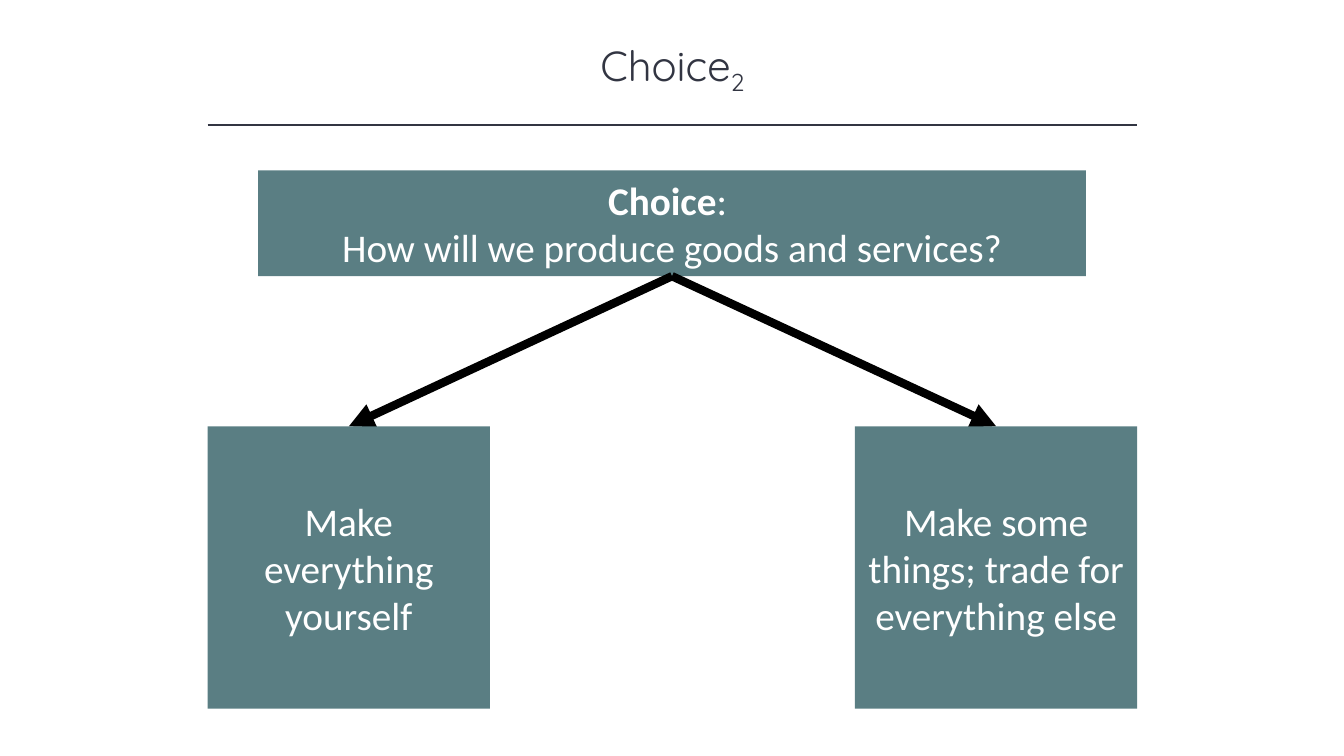
from dataclasses import dataclass

from lxml import etree
from pptx import Presentation
from pptx.dml.color import RGBColor
from pptx.enum.shapes import MSO_CONNECTOR, MSO_SHAPE
from pptx.enum.text import MSO_ANCHOR, MSO_AUTO_SIZE, PP_ALIGN
from pptx.oxml.ns import qn
from pptx.shapes.autoshape import Shape
from pptx.shapes.connector import Connector
from pptx.slide import Slide
from pptx.text.text import TextFrame
from pptx.util import Emu, Pt

RECTANGLE = MSO_SHAPE.RECTANGLE
STRAIGHT = MSO_CONNECTOR.STRAIGHT
CENTER = PP_ALIGN.CENTER
MIDDLE = MSO_ANCHOR.MIDDLE
NO_AUTOFIT = MSO_AUTO_SIZE.NONE

PX = 9144  # 100 px to the inch
TOP, BOTTOM = 0, 2
TITLE_LAYOUT = 5
COLORS = {"ink": "323542", "teal": "5A7E83", "white": "FFFFFF", "arrow": "000000"}


@dataclass(frozen=True)
class Piece:
    text: str
    bold: bool = False
    baseline: int = 0


@dataclass(frozen=True)
class Box:
    left: int
    top: int
    width: int
    height: int
    paragraphs: tuple[tuple[Piece, ...], ...]


TITLE = Box(167, 37, 1000, 61, ((Piece("Choice"), Piece("2", baseline=-25000)),))
QUESTION = Box(256, 169, 821, 105, (
    (Piece("Choice", bold=True), Piece(": ")),
    (Piece("How will we produce goods and services?"),),
))
OPTION_SIZE, OPTION_TOP = 280, 423
RULE_LEFT, RULE_RIGHT, RULE_Y = 206, 1128, 124
OPTIONS = [
    Box(left, OPTION_TOP, OPTION_SIZE, OPTION_SIZE, ((Piece(text),),))
    for left, text in (
        (RULE_LEFT, "Make everything yourself"),
        (RULE_RIGHT - OPTION_SIZE, "Make some things; trade for everything else"),
    )
]


def px(length: int) -> Emu:
    return Emu(length * PX)


def color(name: str) -> RGBColor:
    return RGBColor.from_string(COLORS[name])


def write(frame: TextFrame, box: Box, font: str, size: int, ink: str) -> None:
    frame.word_wrap = True
    frame.auto_size = NO_AUTOFIT
    frame.vertical_anchor = MIDDLE
    for index, pieces in enumerate(box.paragraphs):
        paragraph = frame.add_paragraph() if index else frame.paragraphs[0]
        paragraph.alignment = CENTER
        for piece in pieces:
            run = paragraph.add_run()
            run.text = piece.text
            run.font.name = font
            run.font.size = Pt(size)
            run.font.bold = piece.bold
            run.font.color.rgb = color(ink)
            if piece.baseline:
                run.font._element.set("baseline", str(piece.baseline))


def add_box(slide: Slide, box: Box) -> Shape:
    shape = slide.shapes.add_shape(
        RECTANGLE, px(box.left), px(box.top), px(box.width), px(box.height))
    shape.shadow.inherit = False
    shape.fill.solid()
    shape.fill.fore_color.rgb = color("teal")
    shape.line.fill.background()
    write(shape.text_frame, box, "Calibri", 28, "white")
    return shape


def add_line(slide: Slide, start: tuple[int, int], end: tuple[int, int],
             ink: str, width: int) -> Connector:
    line = slide.shapes.add_connector(STRAIGHT, *map(px, start + end))
    line.line.color.rgb = color(ink)
    line.line.width = Pt(width)
    etree.SubElement(line.element.spPr, qn("a:effectLst"))
    return line


def add_arrow(slide: Slide, source: Shape, target: Shape) -> None:
    arrow = add_line(slide, (0, 0), (0, 0), "arrow", 6)
    arrow.begin_connect(source, BOTTOM)
    arrow.end_connect(target, TOP)
    outline = arrow.element.spPr.find(qn("a:ln"))
    etree.SubElement(outline, qn("a:tailEnd"), type="triangle")
    # The target box covers the tip of its arrow
    arrow.element.addnext(target.element)


def main() -> None:
    deck = Presentation()
    deck.slide_width, deck.slide_height = px(1333), px(750)
    slide = deck.slides.add_slide(deck.slide_layouts[TITLE_LAYOUT])

    # Title and rule
    heading = slide.shapes.title
    heading.left, heading.top = px(TITLE.left), px(TITLE.top)
    heading.width, heading.height = px(TITLE.width), px(TITLE.height)
    write(heading.text_frame, TITLE, "Quicksand", 30, "ink")
    add_line(slide, (RULE_LEFT, RULE_Y), (RULE_RIGHT, RULE_Y), "ink", 1)

    # Question and its two options
    question = add_box(slide, QUESTION)
    for option in OPTIONS:
        add_arrow(slide, question, add_box(slide, option))

    deck.save("out.pptx")


if __name__ == "__main__":
    main()
